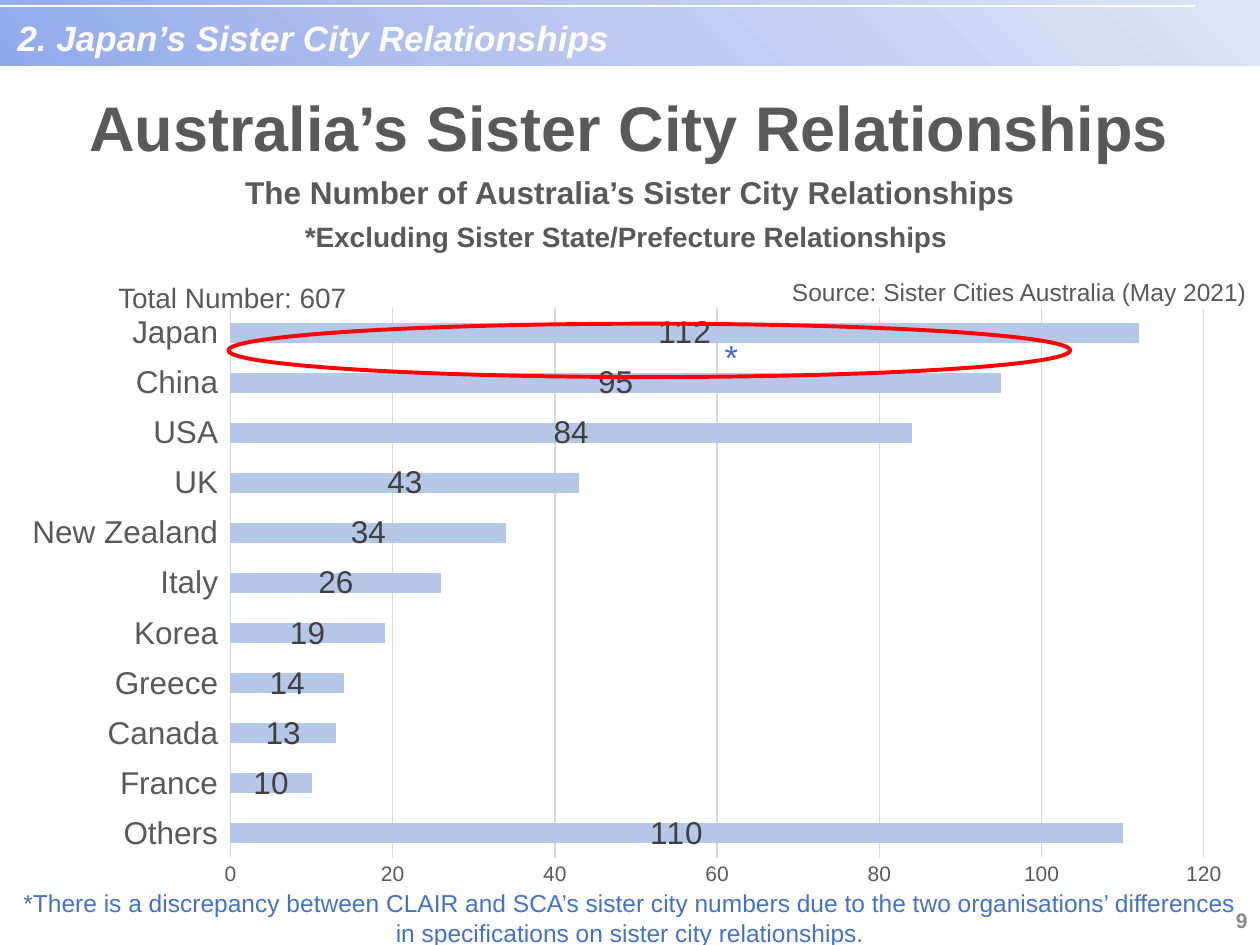
from lxml import etree
from pptx import Presentation
from pptx.chart.data import CategoryChartData
from pptx.dml.color import RGBColor
from pptx.enum.chart import XL_CHART_TYPE, XL_LABEL_POSITION, XL_TICK_LABEL_POSITION, XL_TICK_MARK
from pptx.enum.shapes import MSO_CONNECTOR, MSO_SHAPE
from pptx.enum.text import MSO_ANCHOR, PP_ALIGN
from pptx.oxml import parse_xml
from pptx.oxml.ns import nsdecls, qn
from pptx.util import Pt

LEFT, MID, RIGHT = PP_ALIGN.LEFT, PP_ALIGN.CENTER, PP_ALIGN.RIGHT
TOP, CENTER = MSO_ANCHOR.TOP, MSO_ANCHOR.MIDDLE
LOW, NONE = XL_TICK_LABEL_POSITION.LOW, XL_TICK_MARK.NONE
WHITE = RGBColor(0xFF, 0xFF, 0xFF)
GRAY = RGBColor(0x59, 0x59, 0x59)
DARK = RGBColor(0x40, 0x40, 0x40)
PALE = RGBColor(0x89, 0x89, 0x89)
GRID = RGBColor(0xD9, 0xD9, 0xD9)
BLUE = RGBColor(0x44, 0x72, 0xC4)
BAR = RGBColor(0xB4, 0xC7, 0xE7)
RED = RGBColor(0xFF, 0, 0)
FONT = "Arial"

STOPS = [(0, "92AAEA"), (50, "BDCAF0"), (100, "DEE4F7")]
CITIES = [
    ("Japan", 112), ("China", 95), ("USA", 84), ("UK", 43),
    ("New Zealand", 34), ("Italy", 26), ("Korea", 19), ("Greece", 14),
    ("Canada", 13), ("France", 10), ("Others", 110),
]
PLOT = {"x": 0.18, "y": 0.02, "w": 0.79, "h": 0.91}

HEADS = [
    ((558, 511, 162, 29), CENTER, RIGHT, PALE, True, 1, [("9", 12)]),
    ((42.5, 49.5, 634, 51), CENTER, MID, GRAY, True, 0.9,
     [("Australia’s Sister City Relationships", 36)]),
    ((52.5, 98, 615, 27.5), TOP, MID, GRAY, True, 0.9,
     [("The Number of Australia’s Sister City Relationships", 18),
      ("*Excluding Sister State/Prefecture Relationships ", 16)]),
]
NOTES = [
    ((445.5, 155, 319, 24), TOP, LEFT, GRAY, False, 1,
     [("Source: Sister Cities Australia (May 2021)", 14)]),
    ((60.5, 159, 176, 23), TOP, LEFT, GRAY, False, 0.9,
     [("Total Number: 607", 16)]),
    ((0, 504, 720, 41), TOP, MID, BLUE, False, 1,
     [("*There is a discrepancy between CLAIR and SCA’s sister city numbers "
       "due to the two organisations’ differences in specifications on "
       "sister city relationships.", 14)]),
    ((407, 188, 32.5, 31.5), TOP, LEFT, BLUE, False, 1, [("*", 20)]),
]
BANNER = ((10, 9.5, 474.5, 24.5), TOP, LEFT, WHITE, True, 1,
          [("2. Japan’s Sister City Relationships", 20)])


def style(font, size, color):
    font.name, font.size = FONT, Pt(size)
    font.color.rgb = color


def write(shapes, item, inset=(7.2, 3.6), slant=False):
    place, anchor, align, color, bold, space, lines = item
    frame = shapes.add_textbox(*map(Pt, place)).text_frame
    frame.word_wrap = True
    frame.vertical_anchor = anchor
    frame.margin_left = frame.margin_right = Pt(inset[0])
    frame.margin_top = frame.margin_bottom = Pt(inset[1])
    for i, (text, size) in enumerate(lines):
        para = frame.add_paragraph() if i else frame.paragraphs[0]
        para.text = text
        para.alignment, para.line_spacing = align, space
        if i:
            para.space_before = Pt(6.8)
        style(para.font, size, color)
        para.font.bold, para.font.italic = bold, slant


def add_band(shapes):
    band = shapes.add_shape(MSO_SHAPE.RECTANGLE, 0, 0, Pt(720), Pt(37.5))
    band.shadow.inherit = False
    band.line.fill.background()
    stops = "".join(f'<a:gs pos="{pos * 1000}"><a:srgbClr val="{tone}"/></a:gs>'
                    for pos, tone in STOPS)
    fill = parse_xml(
        f'<a:gradFill {nsdecls("a")} rotWithShape="1"><a:gsLst>{stops}</a:gsLst>'
        '<a:path path="circle"><a:fillToRect t="100000" r="100000"/></a:path>'
        '</a:gradFill>')
    band._element.spPr.find(qn("a:prstGeom")).addnext(fill)
    rule = shapes.add_connector(MSO_CONNECTOR.STRAIGHT, 0, Pt(3.5), Pt(683), Pt(3.5))
    rule.line.color.rgb, rule.line.width = WHITE, Pt(0.75)
    etree.SubElement(rule._element.spPr, qn("a:effectLst"))


def add_bars(shapes):
    data = CategoryChartData()
    names, counts = zip(*reversed(CITIES))
    data.categories = names
    data.add_series("Series 1", counts)
    place = map(Pt, (5, 169, 704, 345.5))
    chart = shapes.add_chart(XL_CHART_TYPE.BAR_STACKED, *place, data).chart
    chart.has_legend = chart.has_title = False
    chart.font.name, chart.font.size = FONT, Pt(10)
    for axis, size in ((chart.category_axis, 18), (chart.value_axis, 12)):
        axis.major_tick_mark = axis.minor_tick_mark = NONE
        axis.format.line.fill.background()
        style(axis.tick_labels.font, size, GRAY)
    chart.category_axis.tick_label_position = LOW
    axis = chart.value_axis
    axis.minimum_scale, axis.maximum_scale, axis.major_unit = 0, 120, 20
    axis.has_major_gridlines = True
    line = axis.major_gridlines.format.line
    line.color.rgb, line.width = GRID, Pt(0.75)
    plot = chart.plots[0]
    plot.gap_width, plot.overlap, plot.vary_by_categories = 150, 100, False
    bars = plot.series[0]
    bars.format.fill.solid()
    bars.format.fill.fore_color.rgb = BAR
    labels = bars.data_labels
    labels.show_value = True
    labels.position = XL_LABEL_POSITION.CENTER
    style(labels.font, 18, DARK)
    modes = "".join(f'<c:{key}Mode val="edge"/>' for key in "xy")
    sizes = "".join(f'<c:{key} val="{val}"/>' for key, val in PLOT.items())
    layout = parse_xml(
        f'<c:layout {nsdecls("c")}><c:manualLayout><c:layoutTarget val="inner"/>'
        f'{modes}{sizes}</c:manualLayout></c:layout>')
    area = chart._chartSpace.chart.plotArea
    for old in area.findall(qn("c:layout")):
        area.remove(old)
    area.insert(0, layout)


def add_ring(shapes):
    ring = shapes.add_shape(MSO_SHAPE.OVAL, *map(Pt, (130.5, 185, 481, 30.5)))
    ring.shadow.inherit = False
    ring.fill.background()
    ring.line.color.rgb, ring.line.width = RED, Pt(2.25)


def main():
    deck = Presentation()
    deck.slide_width, deck.slide_height = Pt(720), Pt(540)
    shapes = deck.slides.add_slide(deck.slide_layouts[6]).shapes
    add_band(shapes)
    for item in HEADS:
        write(shapes, item)
    add_bars(shapes)
    add_ring(shapes)
    for item in NOTES:
        write(shapes, item)
    write(shapes, BANNER, (0, 0), True)
    deck.save("out.pptx")


if __name__ == "__main__":
    main()
